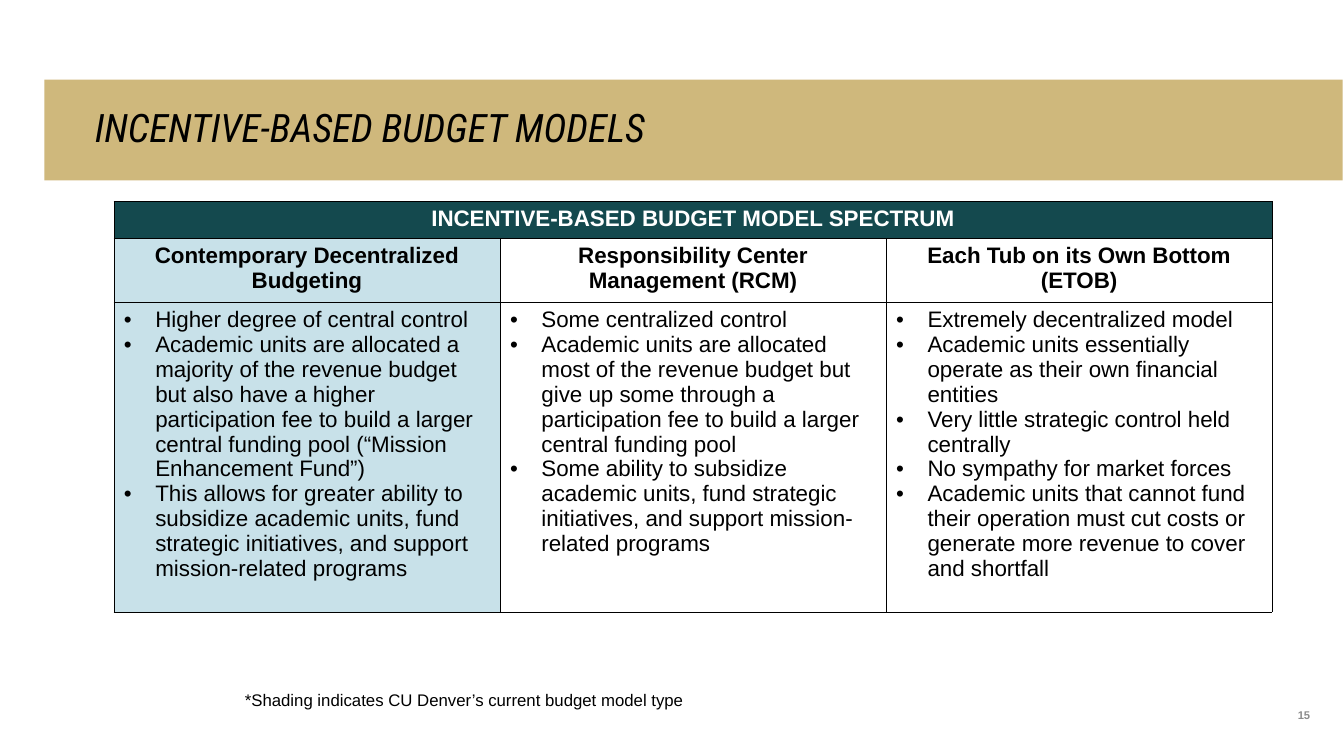
from lxml import etree
from pptx import Presentation
from pptx.dml.color import RGBColor
from pptx.enum.shapes import MSO_SHAPE
from pptx.enum.text import MSO_ANCHOR, PP_ALIGN
from pptx.oxml.ns import qn
from pptx.util import Cm, Pt

RECTANGLE = MSO_SHAPE.RECTANGLE
TOP, MIDDLE, BOTTOM = MSO_ANCHOR.TOP, MSO_ANCHOR.MIDDLE, MSO_ANCHOR.BOTTOM
LEFT, CENTER, RIGHT = PP_ALIGN.LEFT, PP_ALIGN.CENTER, PP_ALIGN.RIGHT

GOLD, TEAL, PALE_BLUE = "CFB87C", "14494E", "C8E1E9"
BLACK, WHITE, GRAY = "000000", "FFFFFF", "8C8C8C"

TITLE_FONT = {"name": "Roboto Condensed", "size": Pt(28), "italic": True}
NUMBER_FONT = {"name": "Arial", "size": Pt(8), "bold": True}
NOTE_FONT = {"name": "Arial", "size": Pt(12)}
HEAD_FONT = {"name": "Arial", "size": Pt(16), "bold": True}
BODY_FONT = {"name": "Arial", "size": Pt(16), "bold": False}

COLUMN_WIDTH = 9.73
ROW_HEIGHTS = [0.88, 1.52, 7.8]
BULLET_INDENT = Cm(0.79)

SPECTRUM_TITLE = "INCENTIVE-BASED BUDGET MODEL SPECTRUM"
MODELS = [
    ("Contemporary Decentralized Budgeting", PALE_BLUE, [
        "Higher degree of central control",
        "Academic units are allocated a majority of the revenue budget but also have "
        "a higher participation fee to build a larger central funding pool "
        "(“Mission Enhancement Fund”)",
        "This allows for greater ability to subsidize academic units, fund strategic "
        "initiatives, and support mission-related programs",
    ]),
    ("Responsibility Center Management (RCM)", None, [
        "Some centralized control",
        "Academic units are allocated most of the revenue budget but give up some "
        "through a participation fee to build a larger central funding pool",
        "Some ability to subsidize academic units, fund strategic initiatives, and "
        "support mission-related programs",
    ]),
    ("Each Tub on its Own Bottom (ETOB)", None, [
        "Extremely decentralized model",
        "Academic units essentially operate as their own financial entities",
        "Very little strategic control held centrally",
        "No sympathy for market forces",
        "Academic units that cannot fund their operation must cut costs or generate "
        "more revenue to cover and shortfall",
    ]),
]


def rgb(color):
    return RGBColor.from_string(color)


def set_attrs(obj, values):
    for name, value in values.items():
        setattr(obj, name, value)


def set_fill(fill, color):
    if color is None:
        fill.background()
    else:
        fill.solid()
        fill.fore_color.rgb = rgb(color)


def add_bullet(p):
    pPr = p._p.get_or_add_pPr()
    pPr.set("marL", str(BULLET_INDENT))
    pPr.set("indent", str(-BULLET_INDENT))
    etree.SubElement(pPr, qn("a:buFont")).set("typeface", "Arial")
    etree.SubElement(pPr, qn("a:buChar")).set("char", "•")


def write(tf, lines, font, color, align=LEFT, bulleted=False):
    for i, line in enumerate(lines):
        p = tf.paragraphs[0] if i == 0 else tf.add_paragraph()
        p.alignment = align
        if bulleted:
            add_bullet(p)
        r = p.add_run()
        r.text = line
        set_attrs(r.font, font)
        r.font.color.rgb = rgb(color)


def add_title_band(slide, text):
    sp = slide.shapes.add_shape(RECTANGLE, Cm(1.12), Cm(2.01), Cm(32.72), Cm(2.54))
    sp.shadow.inherit = False
    set_fill(sp.fill, GOLD)
    sp.line.fill.background()
    set_attrs(sp.text_frame, {
        "word_wrap": True, "vertical_anchor": MIDDLE,
        "margin_left": Cm(1.27), "margin_right": Cm(2.54),
    })
    write(sp.text_frame, [text], TITLE_FONT, BLACK)
    sp.text_frame.paragraphs[0].line_spacing = 0.9


def add_text(slide, box, text, font, color, align=LEFT, frame=None):
    tf = slide.shapes.add_textbox(*map(Cm, box)).text_frame
    set_attrs(tf, {"word_wrap": True, **(frame or {})})
    write(tf, [text], font, color, align)


def add_borders(cell):
    tcPr = cell._tc.get_or_add_tcPr()
    for side in ("lnL", "lnR", "lnT", "lnB"):
        ln = etree.SubElement(tcPr, qn(f"a:{side}"), w=str(Pt(0.25)))
        fill = etree.SubElement(ln, qn("a:solidFill"))
        etree.SubElement(fill, qn("a:srgbClr"), val=BLACK)


def fill_cell(cell, lines, font, color, fill, align=LEFT, bulleted=False):
    set_fill(cell.fill, fill)
    cell.vertical_anchor = TOP
    write(cell.text_frame, lines, font, color, align, bulleted)


def add_model_table(slide):
    count = len(MODELS)
    frame = slide.shapes.add_table(
        len(ROW_HEIGHTS), count, Cm(2.87), Cm(5.08),
        Cm(COLUMN_WIDTH * count), Cm(sum(ROW_HEIGHTS)))
    table = frame.table
    table.horz_banding = False
    for column in table.columns:
        column.width = Cm(COLUMN_WIDTH)
    for row, height in zip(table.rows, ROW_HEIGHTS):
        row.height = Cm(height)
    for cell in table.iter_cells():
        add_borders(cell)
    table.cell(0, 0).merge(table.cell(0, count - 1))
    fill_cell(table.cell(0, 0), [SPECTRUM_TITLE], HEAD_FONT, WHITE, TEAL, CENTER)
    for col, (name, shade, points) in enumerate(MODELS):
        fill_cell(table.cell(1, col), [name], HEAD_FONT, BLACK, shade, CENTER)
        fill_cell(table.cell(2, col), points, BODY_FONT, BLACK, shade, bulleted=True)


def main():
    prs = Presentation()
    prs.slide_width, prs.slide_height = Cm(33.87), Cm(19.05)
    slide = prs.slides.add_slide(prs.slide_layouts[6])
    add_title_band(slide, "INCENTIVE-BASED BUDGET MODELS")
    margins = ("margin_left", "margin_right", "margin_top", "margin_bottom")
    add_text(slide, (30.86, 16.92, 2.16, 1.27), "15", NUMBER_FONT, GRAY, RIGHT,
             {"vertical_anchor": BOTTOM, **dict.fromkeys(margins, 0)})
    add_model_table(slide)
    add_text(slide, (5.92, 17.25, 25.4, 0.76),
             "*Shading indicates CU Denver’s current budget model type", NOTE_FONT, BLACK)
    prs.save("out.pptx")


if __name__ == "__main__":
    main()
